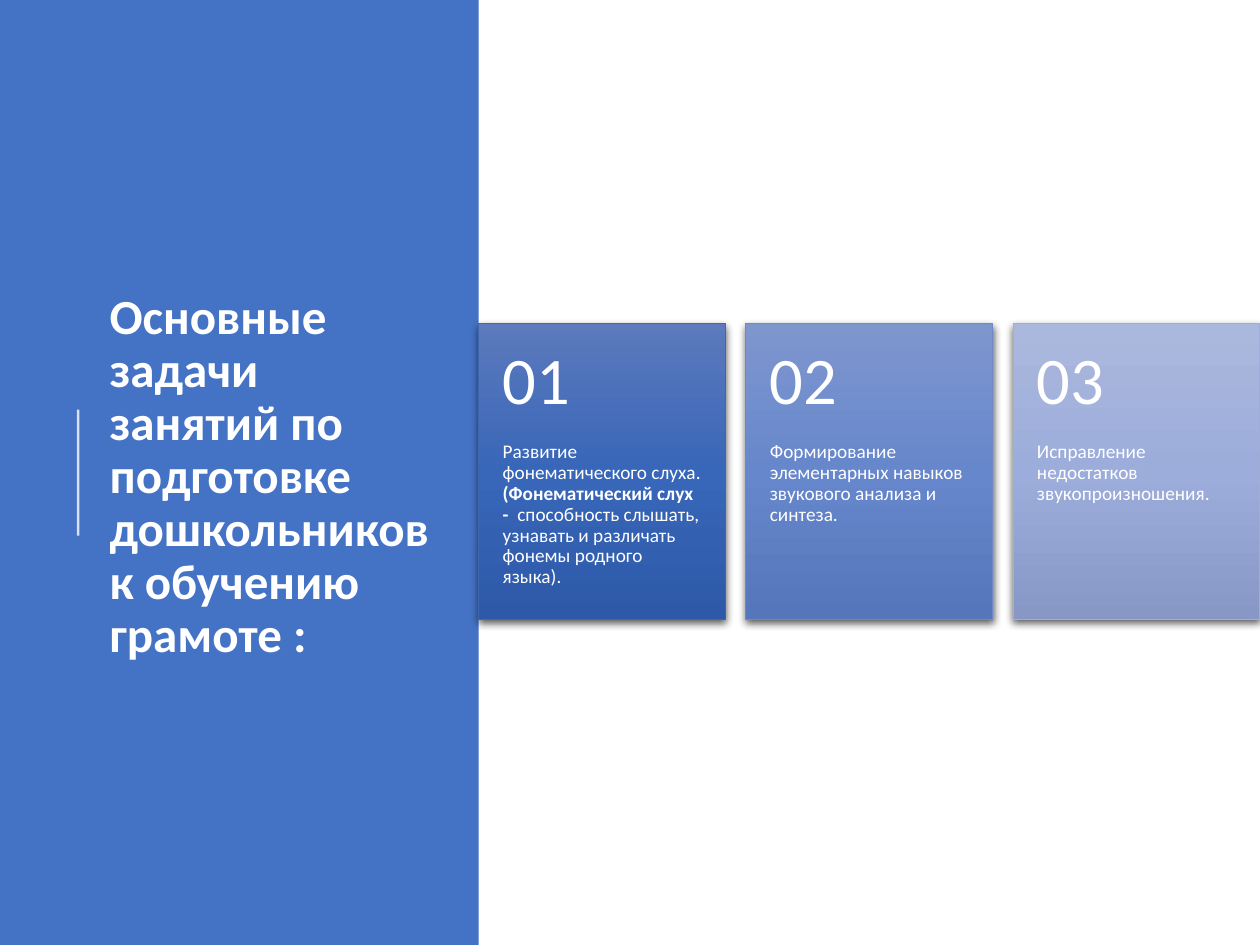
from dataclasses import dataclass

from lxml.etree import SubElement
from pptx import Presentation
from pptx.dml.color import RGBColor
from pptx.enum.shapes import MSO_CONNECTOR, MSO_SHAPE
from pptx.enum.text import MSO_ANCHOR, MSO_AUTO_SIZE, PP_ALIGN
from pptx.oxml.ns import qn
from pptx.util import Inches, Pt


@dataclass(frozen=True)
class Theme:
    font: str = "Calibri"
    panel: str = "4472C4"
    light: str = "FFFFFF"
    shadow: str = "000000"
    title_size: int = 28
    number_size: int = 38
    body_size: int = 11


THEME = Theme()
PANEL_WIDTH = 3.8
CARD_TOP, CARD_WIDTH, CARD_HEIGHT = 2.57, 1.96, 2.35
CARD_STEP = 2.12
NUMBER_HEIGHT = 0.94

TITLE = "Основные задачи занятий по подготовке дошкольников к обучению грамоте :"

# Each card: gradient colours, outline colour, text as (words, bold) spans
CARDS = [
    (("5C7ABD", "3866B8", "2D59A8"), "3E67B2", [
        ("Развитие  фонематического слуха. ", False),
        ("(Фонематический слух -  ", True),
        ("способность слышать, узнавать и различать фонемы родного языка).", False),
    ]),
    (("7E96CE", "6787CC", "5676BB"), "6C88C8", [
        ("Формирование элементарных навыков звукового анализа и синтеза.", False),
    ]),
    (("ABB8DD", "9CADDB", "8798C6"), "9FAED8", [
        ("Исправление недостатков звукопроизношения.", False),
    ]),
]


def rgb(color):
    return RGBColor.from_string(color)


def place(shape, left, top, width, height):
    shape.left, shape.top = Inches(left), Inches(top)
    shape.width, shape.height = Inches(width), Inches(height)


def write(shape, spans, *, size, anchor=MSO_ANCHOR.TOP, insets=(0.1, 0.05, 0.1, 0.05)):
    """Fill a shape with one paragraph made of (words, bold) spans."""
    frame = shape.text_frame
    frame.word_wrap = True
    frame.auto_size = MSO_AUTO_SIZE.NONE
    frame.vertical_anchor = anchor
    (frame.margin_left, frame.margin_top,
     frame.margin_right, frame.margin_bottom) = map(Inches, insets)
    para = frame.paragraphs[0]
    para.alignment = PP_ALIGN.LEFT
    para.line_spacing = 0.9
    for words, bold in spans:
        span = para.add_run()
        span.text = words
        span.font.name = THEME.font
        span.font.size = Pt(size)
        span.font.bold = bold
        span.font.color.rgb = rgb(THEME.light)


def add_color(parent, color, opacity=100):
    node = SubElement(parent, qn("a:srgbClr"), val=color)
    if opacity < 100:
        SubElement(node, qn("a:alpha"), val=str(opacity * 1000))


def set_gradient(shape, colors):
    """Spread the colours evenly from top to bottom."""
    shape.fill.gradient()
    gradient = shape._element.spPr.find(qn("a:gradFill"))
    for child in list(gradient):
        gradient.remove(child)
    stops = SubElement(gradient, qn("a:gsLst"))
    for index, color in enumerate(colors):
        position = 100000 * index // (len(colors) - 1)
        add_color(SubElement(stops, qn("a:gs"), pos=str(position)), color)
    SubElement(gradient, qn("a:lin"), ang="5400000", scaled="0")


def set_shadow(shape):
    shape.shadow.inherit = False
    effects = shape._element.spPr.find(qn("a:effectLst"))
    outer = SubElement(effects, qn("a:outerShdw"), blurRad=str(Pt(4.5)),
                       dist=str(Pt(1.5)), dir="5400000", algn="ctr", rotWithShape="0")
    add_color(outer, THEME.shadow, 63)


def add_rectangle(shapes, left, top, width, height):
    shape = shapes.add_shape(MSO_SHAPE.RECTANGLE, 0, 0, 0, 0)
    place(shape, left, top, width, height)
    shape.shadow.inherit = False
    return shape


def add_text(shapes, left, top, width, height, spans, **style):
    box = shapes.add_textbox(0, 0, 0, 0)
    place(box, left, top, width, height)
    write(box, spans, **style)


def add_panel(page):
    panel = add_rectangle(page.shapes, 0, 0, PANEL_WIDTH, 7.5)
    panel.fill.solid()
    panel.fill.fore_color.rgb = rgb(THEME.panel)
    panel.line.fill.background()


def add_accent_line(page):
    accent = page.shapes.add_connector(
        MSO_CONNECTOR.STRAIGHT, Inches(0.62), Inches(4.25), Inches(0.62), Inches(3.25))
    accent.line.width = Pt(1.5)
    accent.line.color.rgb = rgb(THEME.light)
    properties = accent._element.spPr
    color = next(properties.iter(qn("a:srgbClr")))
    SubElement(color, qn("a:alpha"), val="80000")
    SubElement(properties, qn("a:effectLst"))


def add_title(page):
    title = page.shapes.title
    place(title, 0.77, 0.78, 2.76, 6.02)
    write(title, [(TITLE, True)], size=THEME.title_size, anchor=MSO_ANCHOR.MIDDLE)
    # Bring the title in front of the panel
    page.shapes._spTree.append(title._element)


def add_card(shapes, left, number, colors, outline, spans):
    card = add_rectangle(shapes, left, CARD_TOP, CARD_WIDTH, CARD_HEIGHT)
    set_gradient(card, colors)
    card.line.color.rgb = rgb(outline)
    card.line.width = Pt(0.5)
    set_shadow(card)
    add_text(shapes, left, CARD_TOP + NUMBER_HEIGHT, CARD_WIDTH,
             CARD_HEIGHT - NUMBER_HEIGHT, spans,
             size=THEME.body_size, insets=(0.19, 0, 0.19, 0.36))
    add_text(shapes, left, CARD_TOP, CARD_WIDTH, NUMBER_HEIGHT,
             [(f"{number:02}", False)], size=THEME.number_size,
             anchor=MSO_ANCHOR.MIDDLE, insets=(0.19, 0.18, 0.19, 0.18))


def main():
    deck = Presentation()
    deck.slide_width, deck.slide_height = Inches(10), Inches(7.5)
    page = deck.slides.add_slide(deck.slide_layouts[5])
    add_panel(page)
    add_accent_line(page)
    add_title(page)
    cards = page.shapes.add_group_shape()
    for index, (colors, outline, spans) in enumerate(CARDS):
        add_card(cards.shapes, PANEL_WIDTH + index * CARD_STEP, index + 1,
                 colors, outline, spans)
    # The group takes its extents from the finished cards
    cards._element.recalculate_extents()
    deck.save("out.pptx")


if __name__ == "__main__":
    main()
